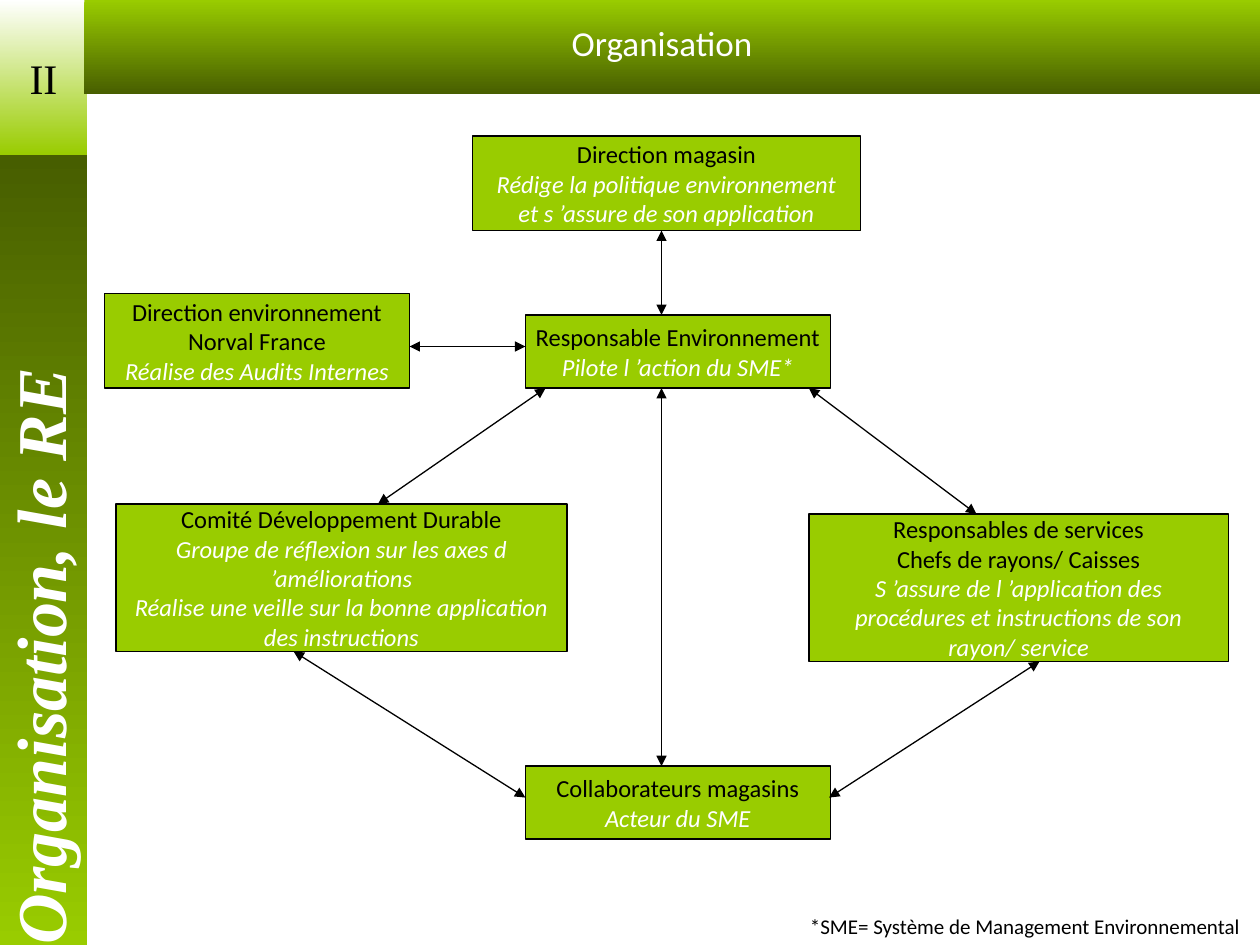
import pptx
import pptx.dml.color
import pptx.enum.dml
import pptx.enum.shapes
import pptx.enum.text
import pptx.oxml
import pptx.oxml.ns
import pptx.util
from pptx.util import Inches

GREEN, DARK_GREEN = "99CC00", "475E00"
WHITE, BLACK = "FFFFFF", "000000"
SHAPES = pptx.enum.shapes.MSO_SHAPE
ANCHOR = pptx.enum.text.MSO_ANCHOR
ALIGN = pptx.enum.text.PP_ALIGN

# Position (left, top, width, height), wrapping, roles in black, tasks in white
ROLE_BOXES = [
    ((3.75, 1.08, 3.08, 0.75), True, ["Direction magasin"],
     ["Rédige la politique environnement et s ’assure de son application"]),
    ((4.17, 2.5, 2.42, 0.58), False, ["Responsable Environnement"],
     ["Pilote l ’action du SME*"]),
    ((6.42, 4.08, 3.33, 1.17), True,
     ["Responsables de services", "Chefs de rayons/ Caisses"],
     ["S ’assure de l ’application des procédures et instructions de son rayon/ service"]),
    ((0.92, 4, 3.58, 1.17), True, ["Comité Développement Durable"],
     ["Groupe de réflexion sur les axes d ’améliorations",
      "Réalise une veille sur la bonne application des instructions"]),
    ((4.17, 6.08, 2.42, 0.58), False, ["Collaborateurs magasins"],
     ["Acteur du SME"]),
    ((0.83, 2.33, 2.42, 0.75), True, ["Direction environnement Norval France"],
     ["Réalise des Audits Internes"]),
]

# Start and end of each two-way arrow
ARROWS = [
    ((4.33, 3.08), (3, 4)),
    ((5.25, 3.08), (5.25, 6.08)),
    ((8.25, 5.25), (6.58, 6.33)),
    ((2.33, 5.17), (4.17, 6.33)),
    ((5.25, 1.83), (5.25, 2.5)),
    ((6.42, 3.08), (7.75, 4.08)),
    ((3.25, 2.75), (4.17, 2.75)),
]


def color(value):
    return pptx.dml.color.RGBColor.from_string(value)


def add_text(box, lines, size, font="Calibri", align=ALIGN.CENTER,
             anchor=ANCHOR.MIDDLE, wrap=True):
    """Write one paragraph per (text, colour, bold, italic) line."""
    frame = box.text_frame
    frame.word_wrap = wrap
    frame.vertical_anchor = anchor
    for index, (text, text_color, bold, italic) in enumerate(lines):
        para = frame.add_paragraph() if index else frame.paragraphs[0]
        para.alignment = align
        span = para.add_run()
        span.text = text
        span.font.name = font
        span.font.size = pptx.util.Pt(size)
        span.font.bold = bold
        span.font.italic = italic
        span.font.color.rgb = color(text_color)
    return frame


def add_box(page, kind, place):
    box = page.shapes.add_shape(kind, *map(Inches, place))
    box.shadow.inherit = False
    return box


def add_gradient_panel(page, place, top_color, bottom_color):
    panel = add_box(page, SHAPES.RECTANGLE, place)
    panel.line.fill.background()
    panel.fill.gradient()
    panel.fill.gradient_angle = 270
    for stop, value in zip(panel.fill.gradient_stops, (top_color, bottom_color)):
        stop.color.rgb = color(value)
    return panel


def add_role_box(page, place, wrap, roles, tasks):
    box = add_box(page, SHAPES.FLOWCHART_PROCESS, place)
    box.fill.solid()
    box.fill.fore_color.rgb = color(GREEN)
    box.line.color.rgb = color(BLACK)
    box.line.width = pptx.util.Pt(0.75)
    lines = [(role, BLACK, False, False) for role in roles]
    lines += [(task, WHITE, False, True) for task in tasks]
    add_text(box, lines, 14, wrap=wrap)


def add_two_way_arrow(page, start, end):
    arrow = page.shapes.add_connector(
        pptx.enum.shapes.MSO_CONNECTOR.STRAIGHT, *map(Inches, start + end))
    arrow.line.color.rgb = color(BLACK)
    arrow.line.width = pptx.util.Pt(0.75)
    properties = arrow.line._get_or_add_ln()
    for tag in ("a:headEnd", "a:tailEnd"):
        tip = pptx.oxml.parse_xml(
            f'<{tag} {pptx.oxml.ns.nsdecls("a")} type="triangle"/>')
        properties.append(tip)
    arrow._element.spPr.append(
        pptx.oxml.parse_xml(f'<a:effectLst {pptx.oxml.ns.nsdecls("a")}/>'))


def add_label(page, place, text, size, text_color, **options):
    label = page.shapes.add_textbox(*map(Inches, place))
    return add_text(label, [(text, text_color, False, False)], size, **options)


def add_section_panels(page):
    # Section number
    number = add_gradient_panel(page, (0, 0, 0.69, 1.23), WHITE, GREEN)
    add_text(number, [("II", BLACK, False, False)], 24,
             font="Times New Roman", wrap=False)

    # Title band
    add_gradient_panel(page, (0.67, 0, 9.33, 0.75), GREEN, DARK_GREEN)
    title = add_label(page, (0.67, 0, 9.17, 0.71), "Organisation", 20, WHITE)
    title.paragraphs[0].line_spacing = 0.9

    # Section name, read upwards
    sidebar = add_gradient_panel(page, (0, 1.23, 0.69, 6.27), DARK_GREEN, GREEN)
    frame = add_text(sidebar, [("Organisation, le RE", WHITE, True, True)], 40,
                     font="Times New Roman", align=ALIGN.LEFT,
                     anchor=ANCHOR.BOTTOM)
    frame.margin_top = frame.margin_bottom = 0
    frame._txBody.bodyPr.set("vert", "vert270")


def main():
    deck = pptx.Presentation()
    deck.slide_width, deck.slide_height = Inches(10), Inches(7.5)
    page = deck.slides.add_slide(deck.slide_layouts[6])

    add_section_panels(page)

    # Organisation chart
    for role_box in ROLE_BOXES:
        add_role_box(page, *role_box)
    for start, end in ARROWS:
        add_two_way_arrow(page, start, end)

    # Footnote
    add_label(page, (6.33, 7.2, 3.64, 0.3),
              "*SME= Système de Management Environnemental", 12, BLACK,
              align=ALIGN.LEFT, anchor=ANCHOR.TOP, wrap=False)

    deck.save("out.pptx")


if __name__ == "__main__":
    main()
